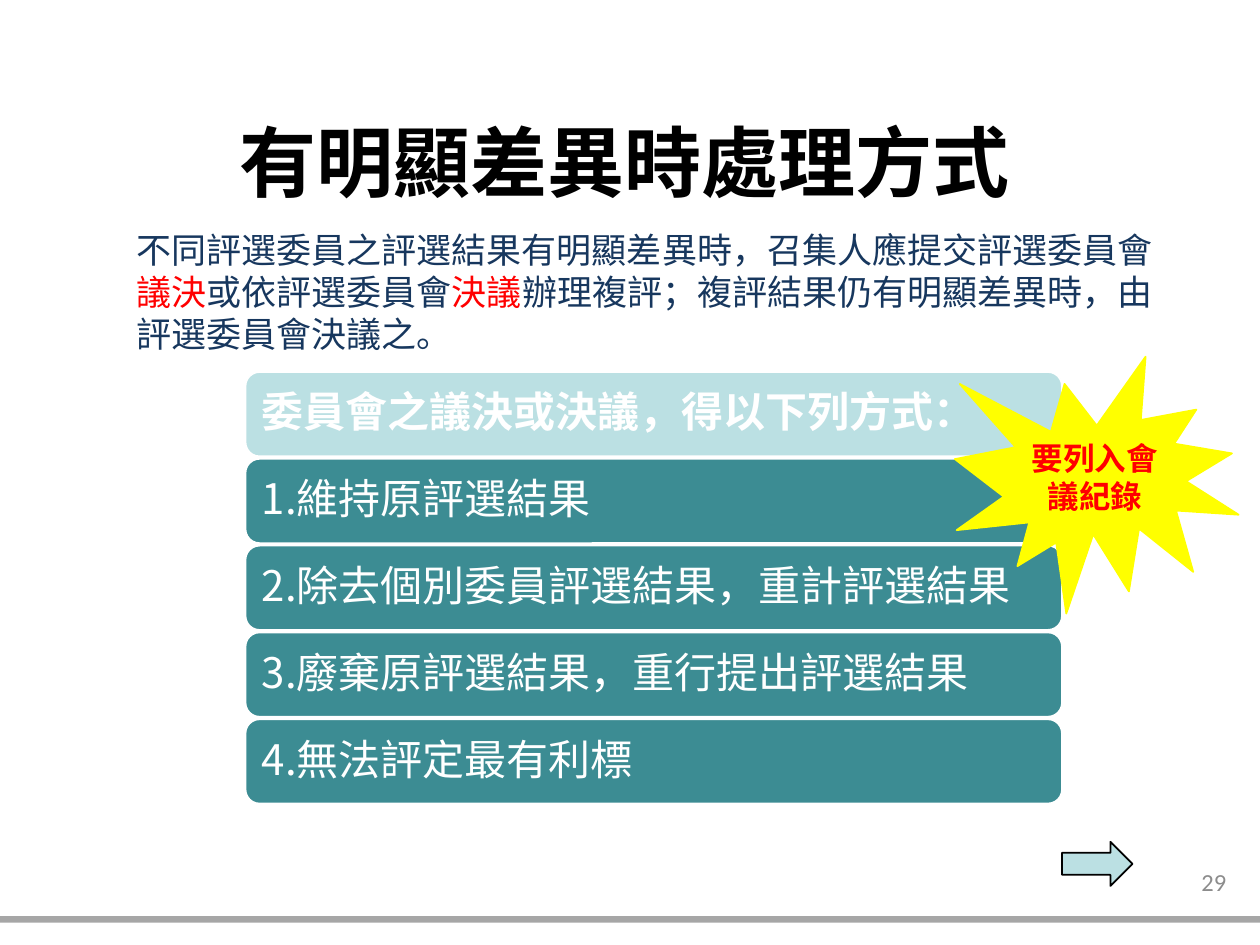
import pptx
import pptx.util
import pptx.dml.color
import pptx.oxml.ns
import pptx.enum.shapes
import pptx.enum.text
import lxml.etree

Cm = pptx.util.Cm
Pt = pptx.util.Pt
Shape = pptx.enum.shapes.MSO_SHAPE
Align = pptx.enum.text.PP_ALIGN
Anchor = pptx.enum.text.MSO_ANCHOR

CJK_FONT = "Noto Sans CJK SC"
COLORS = {
    "black": "000000",
    "white": "FFFFFF",
    "navy": "17375E",
    "red": "FF0000",
    "yellow": "FFFF00",
    "pale teal": "BBE0E3",
    "teal": "3C8C93",
    "bar gray": "A6A6A6",
    "number gray": "8C8C8C",
}

TITLE = "有明顯差異時處理方式"
RULE_RUNS = [
    ("不同評選委員之評選結果有明顯差異時，召集人應提交評選委員會", "navy"),
    ("議決", "red"),
    ("或依評選委員會", "navy"),
    ("決議", "red"),
    ("辦理複評；複評結果仍有明顯差異時，由評選委員會決議之。", "navy"),
]
OPTIONS_HEADING = "委員會之議決或決議，得以下列方式："
OPTIONS = [
    "1.維持原評選結果",
    "2.除去個別委員評選結果，重計評選結果",
    "3.廢棄原評選結果，重行提出評選結果",
    "4.無法評定最有利標",
]
REMINDER = "要列入會議紀錄"
PAGE_NUMBER = "29"

ROW_LEFT, ROW_TOP, ROW_WIDTH, ROW_HEIGHT = 4.95, 7.5, 16.46, 1.7
ROW_PITCH = 1.75


def rgb(name):
    return pptx.dml.color.RGBColor.from_string(COLORS[name])


def add_shape(slide, kind, left, top, width, height, fill=None, line=None):
    shape = slide.shapes.add_shape(kind, Cm(left), Cm(top), Cm(width), Cm(height))
    shape.shadow.inherit = False
    if fill:
        shape.fill.solid()
        shape.fill.fore_color.rgb = rgb(fill)
    else:
        shape.fill.background()
    if line:
        shape.line.color.rgb = rgb(line)
        shape.line.width = Pt(1)
    else:
        shape.line.fill.background()
    return shape


def write_text(shape, runs, size, alignment=Align.LEFT, bold=False,
               font=CJK_FONT, spacing=None, anchor=Anchor.MIDDLE):
    """Fill the shape's first paragraph with (text, color name) runs."""
    frame = shape.text_frame
    frame.word_wrap = True
    frame.vertical_anchor = anchor
    paragraph = frame.paragraphs[0]
    paragraph.alignment = alignment
    if spacing:
        paragraph.line_spacing = spacing
    for text, color in runs:
        run = paragraph.add_run()
        run.text = text
        run.font.size = Pt(size)
        run.font.bold = bold
        run.font.name = font
        run.font.color.rgb = rgb(color)
        east_asian = lxml.etree.SubElement(
            run.font._element, pptx.oxml.ns.qn("a:ea"))
        east_asian.set("typeface", font)


def add_option_rows(slide):
    for index, text in enumerate([OPTIONS_HEADING] + OPTIONS):
        is_heading = index == 0
        row = add_shape(slide, Shape.ROUNDED_RECTANGLE,
                        ROW_LEFT, ROW_TOP + index * ROW_PITCH,
                        ROW_WIDTH, ROW_HEIGHT,
                        "pale teal" if is_heading else "teal", "white")
        write_text(row, [(text, "white")], 24, bold=is_heading, spacing=0.9)


def main():
    presentation = pptx.Presentation()
    presentation.slide_width = Cm(25.4)
    presentation.slide_height = Cm(19.05)
    slide = presentation.slides.add_slide(presentation.slide_layouts[5])

    add_shape(slide, Shape.RECTANGLE, -0.03, 18.47, 25.45, 0.13, "bar gray")

    title = slide.shapes.title
    title.left, title.top = Cm(1.7), Cm(2.24)
    title.width, title.height = Cm(21.8), Cm(2)
    write_text(title, [(TITLE, "black")], 44, Align.CENTER, bold=True)

    add_option_rows(slide)

    rule = add_shape(slide, Shape.ROUNDED_RECTANGLE, 2.34, 4.27, 21.62, 3.22)
    write_text(rule, RULE_RUNS, 20, spacing=Pt(24))

    number = slide.shapes.add_textbox(Cm(19.05), Cm(17.35), Cm(5.92), Cm(1.32))
    write_text(number, [(PAGE_NUMBER, "number gray")], 14, Align.RIGHT,
               font="Calibri", anchor=Anchor.TOP)

    burst = add_shape(slide, Shape.EXPLOSION1, 19.25, 7.19, 5.72, 5.18,
                      "yellow", "yellow")
    write_text(burst, [(REMINDER, "red")], 18, Align.CENTER, bold=True,
               spacing=Pt(21.5))

    add_shape(slide, Shape.RIGHT_ARROW, 21.41, 16.97, 1.42, 0.89,
              "pale teal", "black")

    presentation.save("out.pptx")


if __name__ == "__main__":
    main()
